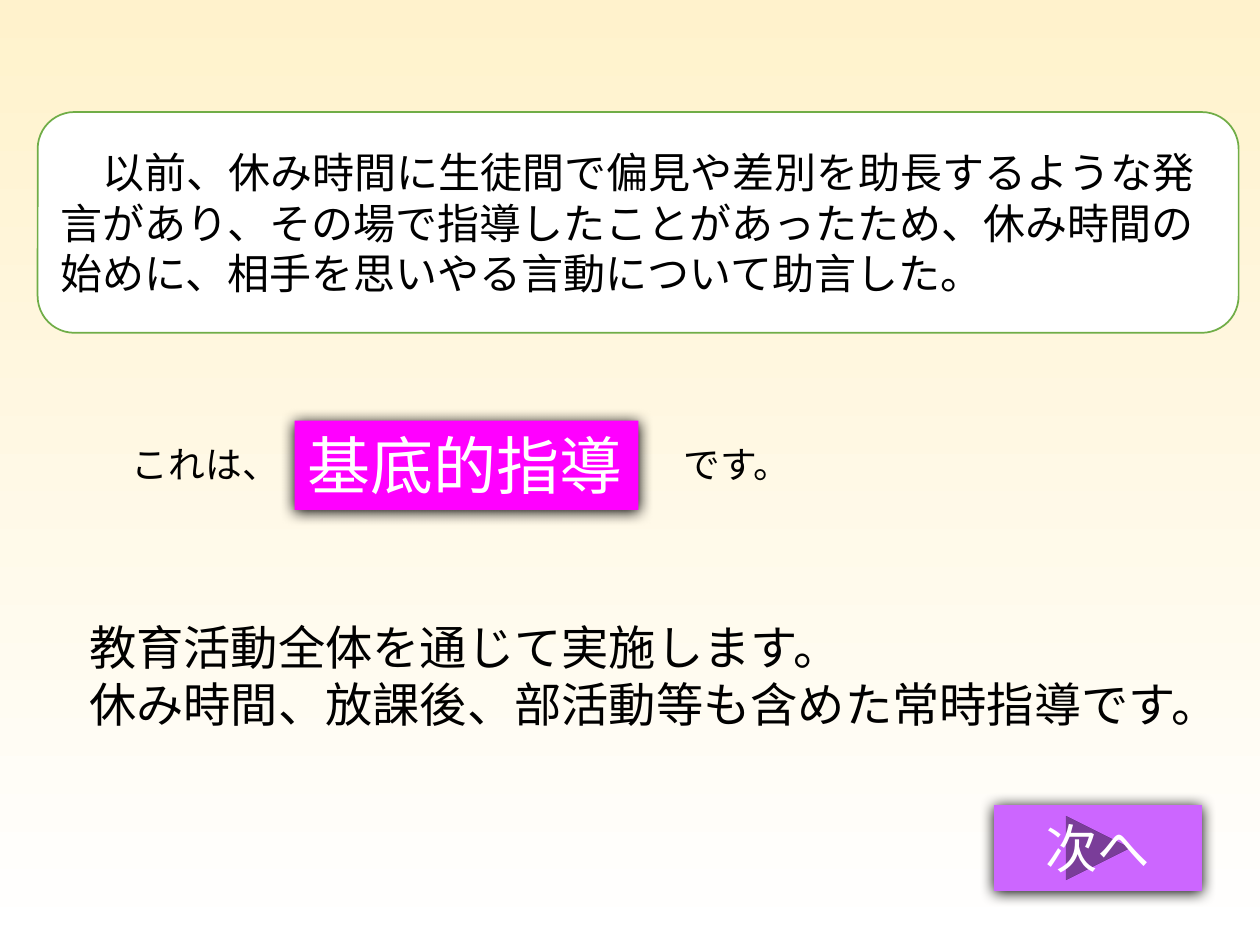
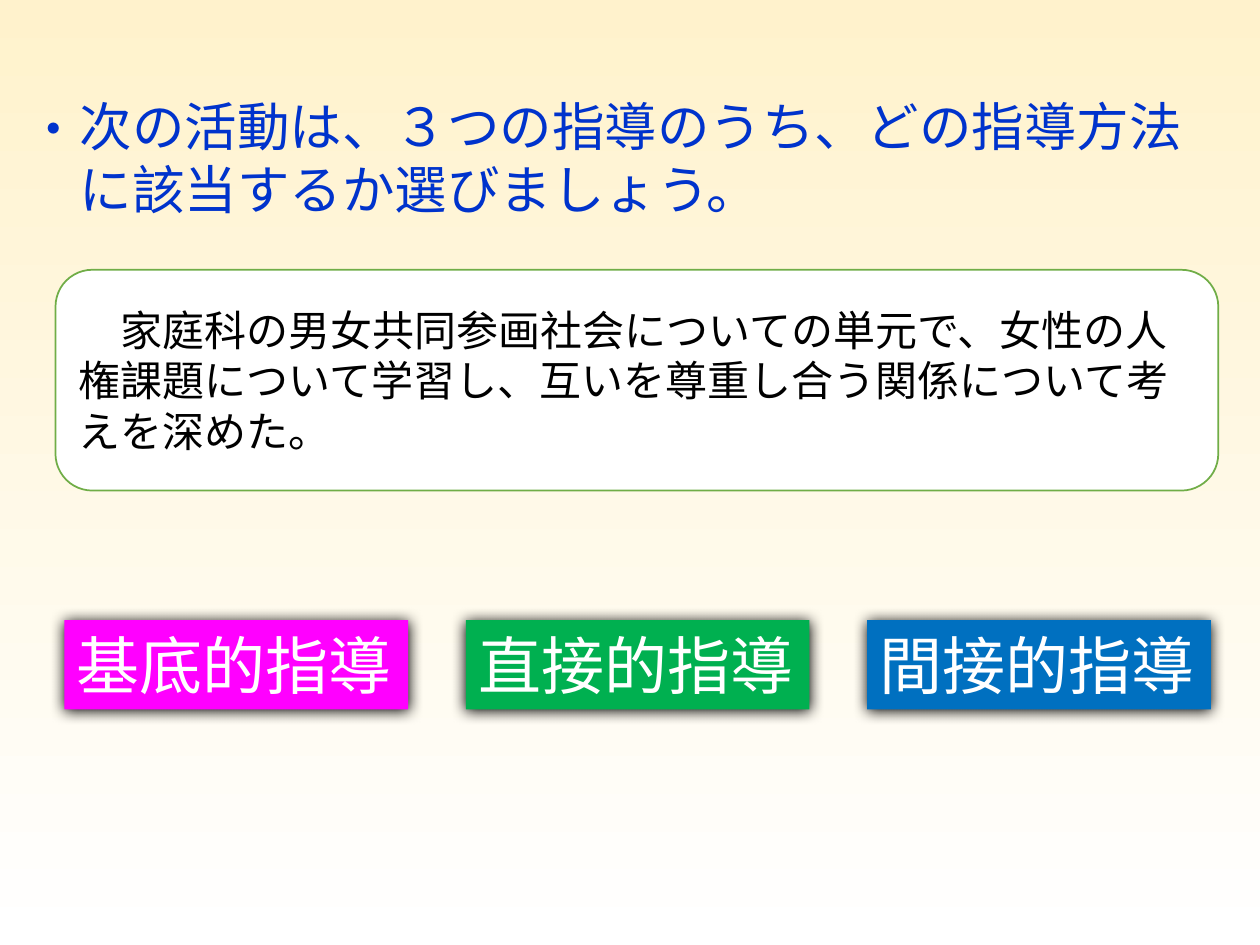
from dataclasses import dataclass
from lxml.etree import SubElement
from pptx import Presentation
from pptx.dml.color import RGBColor as RGB
from pptx.enum.shapes import MSO_SHAPE as SHAPE
from pptx.enum.text import MSO_ANCHOR as ANCHOR, PP_ALIGN as ALIGN
from pptx.oxml.ns import qn
from pptx.util import Cm, Pt


@dataclass(frozen=True)
class Theme:
    font: str = "Noto Sans CJK JP"
    latin: str = "Calibri"
    sky: str = "FFF2CC"
    white: str = "FFFFFF"
    black: str = "000000"
    question: str = "0033CC"
    frame: str = "70AD47"
    button: str = "CC66FF"
    base: str = "FF00FF"
    direct: str = "00B050"
    indirect: str = "0070C0"
    small: float = 21
    story: float = 24
    body: float = 27
    large: float = 30
    label: float = 36


def write(p, text, font, size, color, align=ALIGN.LEFT, margin=0, indent=0,
          bullet=None):
    pPr = p._p.get_or_add_pPr()
    pPr.set("marL", str(Pt(margin)))
    pPr.set("indent", str(Pt(indent)))
    if bullet:
        SubElement(pPr, qn("a:buFont"), typeface=font)
        SubElement(pPr, qn("a:buChar"), char=bullet)
    p.alignment = align
    r = p.add_run()
    r.text = text
    r.font.size = Pt(size)
    r.font.color.rgb = RGB.from_string(color)
    r.font.name = font
    SubElement(r._r.get_or_add_rPr(), qn("a:ea"), typeface=Theme.font)


class Deck:
    LABEL_W, LABEL_H = 6.93, 1.8

    def __init__(self, theme):
        self.theme = theme
        self.prs = Presentation()
        self.prs.slide_width, self.prs.slide_height = Cm(25.4), Cm(19.05)

    def new_slide(self):
        self.slide = self.prs.slides.add_slide(self.prs.slide_layouts[6])
        fill = self.slide.background.fill
        fill.gradient()
        fill.gradient_angle = 270
        for stop, color in zip(fill.gradient_stops, (self.theme.sky, self.theme.white)):
            stop.color.rgb = RGB.from_string(color)

    def shape(self, kind, box, fill, line=None, shadow=False):
        sp = self.slide.shapes.add_shape(kind, *map(Cm, box))
        sp.shadow.inherit = False
        sp.fill.solid()
        sp.fill.fore_color.rgb = RGB.from_string(fill)
        if line:
            sp.line.color.rgb = RGB.from_string(line)
            sp.line.width = Pt(1)
        else:
            sp.line.fill.background()
        if shadow:
            effects = sp._element.spPr.find(qn("a:effectLst"))
            outer = SubElement(effects, qn("a:outerShdw"), blurRad=str(Pt(8.5)),
                               dist=str(Pt(1)), dir="5400000", algn="t", rotWithShape="0")
            SubElement(outer, qn("a:srgbClr"), val=self.theme.black)
        return sp.text_frame

    def text(self, box, lines, size, color, formats=({}, {})):
        tf = self.slide.shapes.add_textbox(*map(Cm, box)).text_frame
        tf.word_wrap = True
        for i, (line, extra) in enumerate(zip(lines, formats)):
            p = tf.add_paragraph() if i else tf.paragraphs[0]
            write(p, line, self.theme.font, size, color, **extra)

    def label(self, left, top, text, fill):
        tf = self.shape(SHAPE.RECTANGLE, (left, top, self.LABEL_W, self.LABEL_H),
                        fill, shadow=True)
        tf.word_wrap = False
        tf.vertical_anchor = ANCHOR.TOP
        write(tf.paragraphs[0], text, self.theme.font, self.theme.label, self.theme.white)

    def button(self, box, text):
        tf = self.shape(SHAPE.ACTION_BUTTON_FORWARD_OR_NEXT, box, self.theme.button,
                        shadow=True)
        tf.vertical_anchor = ANCHOR.MIDDLE
        write(tf.paragraphs[0], text, self.theme.font, self.theme.large,
              self.theme.white, align=ALIGN.CENTER)

    def story(self, box, text, font):
        t = self.theme
        tf = self.shape(SHAPE.ROUNDED_RECTANGLE, box, t.white, line=t.frame)
        tf.word_wrap = True
        tf.vertical_anchor = ANCHOR.MIDDLE
        write(tf.paragraphs[0], text, font, t.story, t.black, indent=t.story)


def answer_slide(deck):
    t = deck.theme
    deck.new_slide()
    deck.label(5.94, 8.48, "基底的指導", t.base)
    deck.button((20.04, 16.23, 4.19, 1.73), "次へ")
    for left, phrase in ((2.41, "これは、"), (13.53, "です。")):
        deck.text((left, 8.79, 3.6, 1.14), [phrase], t.small, t.black)
    deck.text((1.55, 12.34, 22.68, 2.57),
              ["教育活動全体を通じて実施します。",
               "休み時間、放課後、部活動等も含めた常時指導です。"], t.body, t.black)
    deck.story((0.76, 2.26, 24.21, 4.45),
               "以前、休み時間に生徒間で偏見や差別を助長するような発言があり、"
               "その場で指導したことがあったため、休み時間の始めに、"
               "相手を思いやる言動について助言した。", t.latin)


def question_slide(deck):
    t = deck.theme
    deck.new_slide()
    deck.text((0.3, 1.78, 24.79, 2.82),
              ["次の活動は、３つの指導のうち、どの指導方法", "に該当するか選びましょう。"],
              t.large, t.question,
              [{"margin": t.large, "indent": -t.large, "bullet": "・"},
               {"margin": t.large}])
    deck.story((1.12, 5.44, 23.44, 4.45),
               "家庭科の男女共同参画社会についての単元で、女性の人権課題について"
               "学習し、互いを尊重し合う関係について考えを深めた。", t.font)
    choices = [("基底的指導", t.base), ("直接的指導", t.direct), ("間接的指導", t.indirect)]
    for i, (text, fill) in enumerate(choices):
        deck.label(1.3 + 8.09 * i, 12.5, text, fill)


def main():
    deck = Deck(Theme())
    answer_slide(deck)
    question_slide(deck)
    deck.prs.save("out.pptx")


if __name__ == "__main__":
    main()
